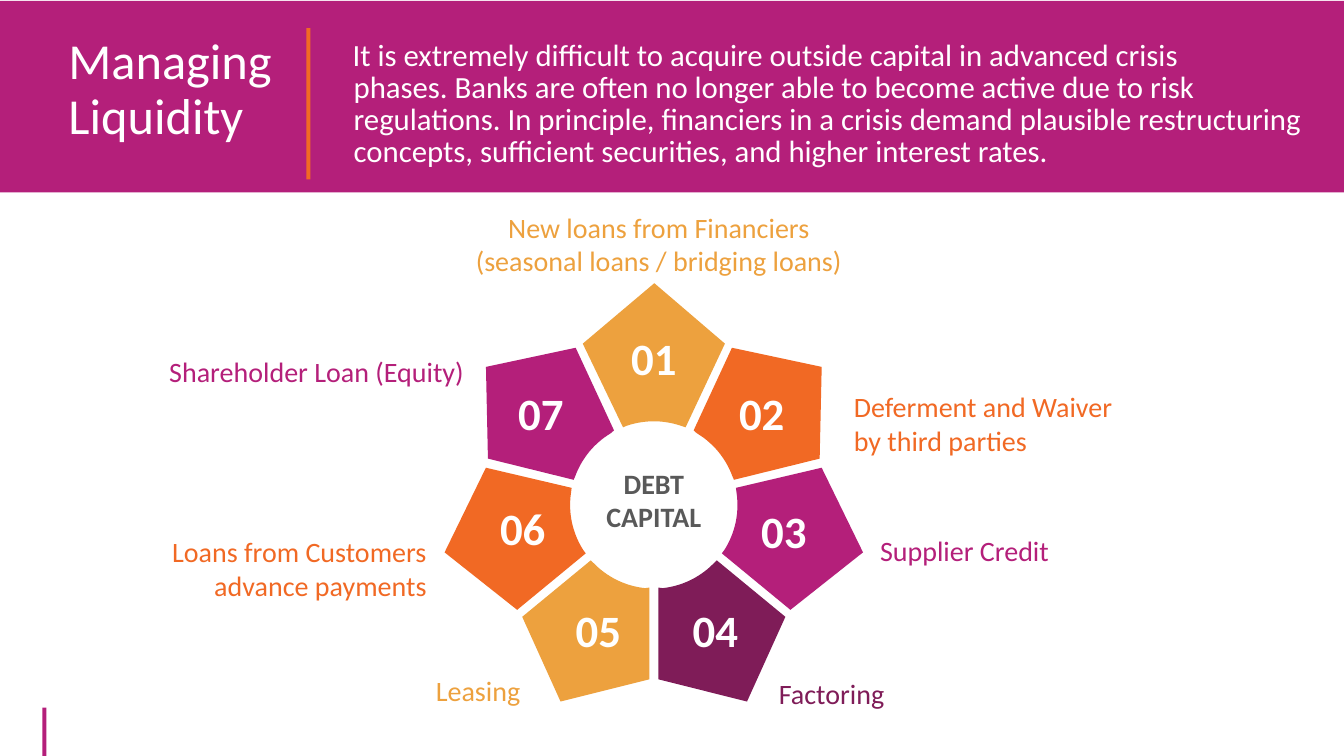
from math import atan2, cos, pi, sin
from pptx import Presentation
from pptx.dml.color import RGBColor
from pptx.enum.shapes import MSO_SHAPE
from pptx.enum.text import MSO_ANCHOR, MSO_AUTO_SIZE, PP_ALIGN
from pptx.util import Pt

PX = 9144  # 100 px to the inch
FONT = "Calibri"
COLORS = {"magenta": "B41F7A", "orange": "F16924", "amber": "EDA13E",
          "plum": "7F1C58", "grey": "595959", "white": "FFFFFF"}
LEFT, CENTER, RIGHT = PP_ALIGN.LEFT, PP_ALIGN.CENTER, PP_ALIGN.RIGHT

# Content
TITLE = "Managing Liquidity"
INTRO = ("It is extremely difficult to acquire outside capital in advanced crisis phases. "
         "Banks are often no longer able to become active due to risk regulations. "
         "In principle, financiers in a crisis demand plausible restructuring concepts, "
         "sufficient securities, and higher interest rates.")
HUB = ("DEBT\nCAPITAL", (591, 457, 115, 77))

# Label, colour, label box, alignment, wrap, left and top of the number
SOURCES = [
    ("New loans from Financiers\n(seasonal loans / bridging loans)", "amber",
     (460, 203, 387, 77), CENTER, False, (598, 323)),
    ("Deferment and Waiver\nby third parties", "orange",
     (837, 381, 456, 77), LEFT, True, (705, 378)),
    ("Supplier Credit", "magenta", (863, 524, 190, 44), LEFT, False, (727, 495)),
    ("Factoring", "plum", (761, 665, 126, 44), RIGHT, False, (659, 593)),
    ("Leasing", "amber", (421, 662, 105, 44), RIGHT, False, (543, 593)),
    ("Loans from Customers\nadvance payments", "orange",
     (158, 525, 275, 77), RIGHT, False, (468, 492)),
    ("Shareholder Loan (Equity)", "magenta", (155, 346, 315, 44), RIGHT, False, (486, 378)),
]

# Petals 01 to 04, clockwise from inner corner to inner corner
AXIS_X, HUB_Y, HUB_R = 648.5, 501, 83
PETALS = [
    [(618, 424), (578, 341), (649, 281), (719, 341), (680, 424)],
    [(688, 427), (726, 345), (815, 364), (813, 455), (728, 476)],
    [(730, 484), (815, 464), (856, 548), (784, 605), (716, 549)],
    [(711, 556), (779, 612), (741, 696), (653, 674), (653, 583)],
]
# Petals 05 to 07 mirror 04 to 02
PETALS += [[(2 * AXIS_X - x, y) for x, y in reversed(petal)] for petal in PETALS[:0:-1]]

prs = Presentation()
prs.slide_width, prs.slide_height = 1333 * PX, 750 * PX
slide = prs.slides.add_slide(prs.slide_layouts[6])


def paint(sp, color):
    sp.shadow.inherit = False
    sp.fill.solid()
    sp.fill.fore_color.rgb = RGBColor.from_string(COLORS[color])
    sp.line.fill.background()


def add_bar(box, color):
    paint(slide.shapes.add_shape(MSO_SHAPE.RECTANGLE, *(v * PX for v in box)), color)


def add_text(text, box, size, color, align=LEFT, bold=False, wrap=True,
             anchor=MSO_ANCHOR.TOP, grow=True):
    tf = slide.shapes.add_textbox(*(v * PX for v in box)).text_frame
    tf.word_wrap = wrap
    tf.vertical_anchor = anchor
    tf.auto_size = MSO_AUTO_SIZE.SHAPE_TO_FIT_TEXT if grow else MSO_AUTO_SIZE.NONE
    p = tf.paragraphs[0]
    p.text = text
    p.alignment = align
    for r in p.runs:
        r.font.name, r.font.size, r.font.bold = FONT, Pt(size), bold
        r.font.color.rgb = RGBColor.from_string(COLORS[color])
    return p


def hub_arc(start, end, steps=16):
    """Points on the hub circle, counter-clockwise from start to end."""
    a, b = (atan2(y - HUB_Y, x - AXIS_X) for x, y in (start, end))
    sweep = (a - b) % (2 * pi)
    angles = [a - sweep * i / steps for i in range(1, steps)]
    return [(AXIS_X + HUB_R * cos(t), HUB_Y + HUB_R * sin(t)) for t in angles]


# Header band and accents
add_bar((0, 1, 1333, 190), "magenta")
add_bar((42, 702, 4, 48), "magenta")
add_bar((304, 28, 4, 150), "orange")

# Header text; sentences are tied by no-break spaces
p = add_text(INTRO.replace(". ", "." + chr(160)), (340, 36, 974, 201), 22, "white", grow=False)
p.line_spacing = Pt(22.8)
pPr = p._p.get_or_add_pPr()
pPr.set("marL", str(PX))
pPr.set("indent", str(-PX))
p = add_text(TITLE, (58, 31, 351, 245), 36, "white", grow=False)
p.line_spacing = 0.9

# Petals
for petal, (_, color, *_) in zip(PETALS, SOURCES):
    outline = [(round(x * PX), round(y * PX))
               for x, y in petal + hub_arc(petal[-1], petal[0])]
    builder = slide.shapes.build_freeform(*outline[0])
    builder.add_line_segments(outline[1:], close=True)
    paint(builder.convert_to_shape(), color)

# Labels and numbers
for number, (label, color, box, align, wrap, (x, y)) in enumerate(SOURCES, 1):
    add_text(label, box, 20, color, align, wrap=wrap, anchor=MSO_ANCHOR.BOTTOM)
    add_text(f"{number:02d}", (x, y, 101, 64), 32, "white", CENTER, bold=True)

# Hub
add_text(*HUB, 20, "grey", CENTER, bold=True, wrap=False, anchor=MSO_ANCHOR.BOTTOM)

prs.save("out.pptx")
